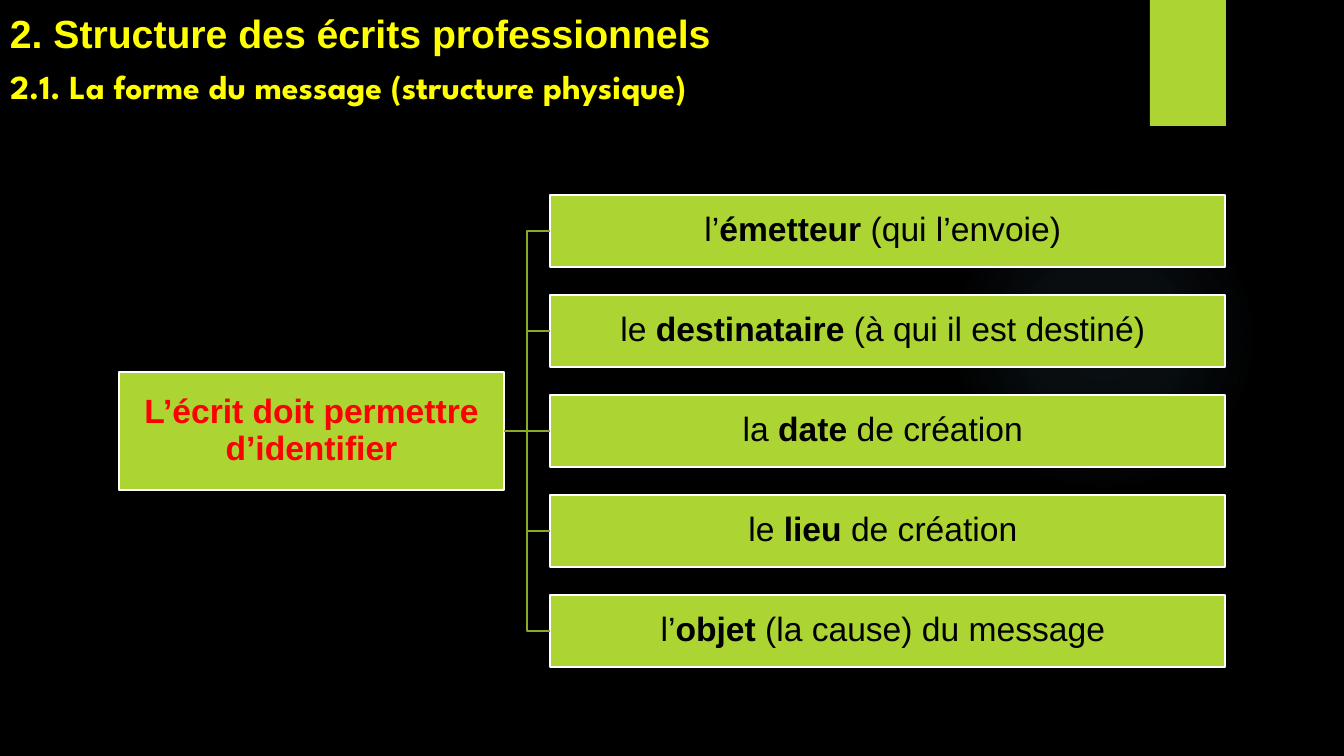
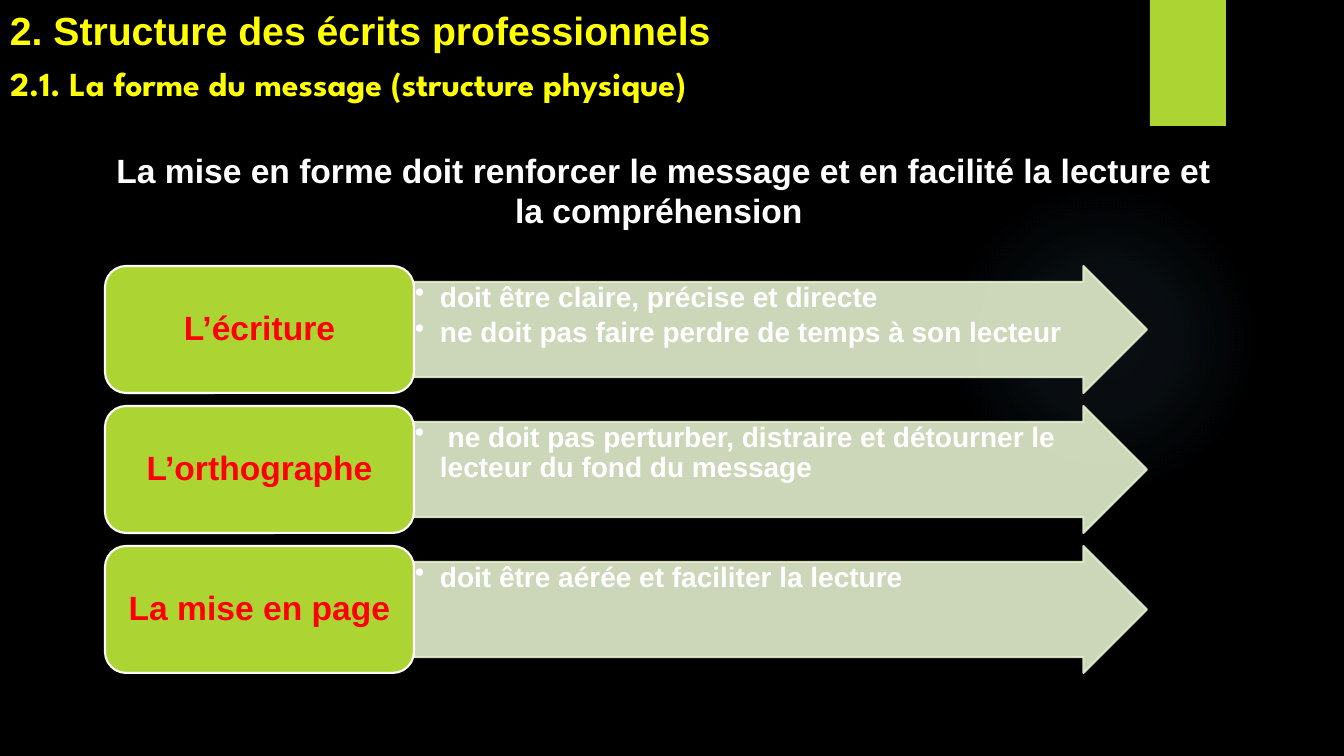
from dataclasses import dataclass

from lxml import etree
from pptx import Presentation
from pptx.dml.color import RGBColor
from pptx.enum.shapes import MSO_CONNECTOR, MSO_SHAPE
from pptx.enum.text import MSO_ANCHOR, PP_ALIGN
from pptx.oxml import parse_xml
from pptx.oxml.ns import nsdecls, qn
from pptx.util import Emu, Pt

# Enum members
RECTANGLE, ROUNDED = MSO_SHAPE.RECTANGLE, MSO_SHAPE.ROUNDED_RECTANGLE
ARROW, OVAL = MSO_SHAPE.RIGHT_ARROW, MSO_SHAPE.OVAL
ELBOW, STRAIGHT = MSO_CONNECTOR.ELBOW, MSO_CONNECTOR.STRAIGHT
LEFT, CENTER = PP_ALIGN.LEFT, PP_ALIGN.CENTER
TOP, MIDDLE, BOTTOM = MSO_ANCHOR.TOP, MSO_ANCHOR.MIDDLE, MSO_ANCHOR.BOTTOM
LEFT_SIDE, RIGHT_SIDE = 1, 3

COLORS = {
    "black": "000000", "white": "FFFFFF", "yellow": "FFFF00", "red": "FF0000",
    "lime": "ACD433", "pale": "E3EFCE", "olive": "8AAA29", "glow": "7AC4F0",
}
BODY_FONT, SUBTITLE_FONT = "Arial", "League Spartan"
EMU_PER_PX = 914400 / 100.8
SLIDE_WIDTH, SLIDE_HEIGHT = 1344, 756
LINE_WIDTH = Pt(1.5)

TITLE = "2. Structure des écrits professionnels"
SUBTITLE = "2.1. La forme du message (structure physique)"


@dataclass(frozen=True)
class Box:
    left: int
    top: int
    width: int
    height: int

    def emu(self) -> tuple:
        return tuple(px(n) for n in (self.left, self.top, self.width, self.height))

    def below(self, distance: int) -> "Box":
        return Box(self.left, self.top + distance, self.width, self.height)


@dataclass(frozen=True)
class Topic:
    name: str
    points: tuple


# Text between ** marks is bold
IDENTIFIERS = (
    "l’**émetteur** (qui l’envoie) ",
    "le **destinataire** (à qui il est destiné) ",
    "la **date** de création ",
    "le **lieu** de création ",
    "l’**objet** (la cause) du message ",
)
ROOT_BOX = Box(119, 372, 385, 118)
IDENTIFIER_BOX, IDENTIFIER_PITCH = Box(550, 195, 675, 72), 100

TOPICS = (
    Topic("L’écriture", ("doit être claire, précise et directe",
                         "ne doit pas faire perdre de temps à son lecteur")),
    Topic("L’orthographe", (" ne doit pas perturber, distraire et détourner le "
                            "lecteur du fond du message",)),
    Topic("La mise en page", ("doit être aérée et faciliter la lecture",)),
)
TOPIC_BOX, ARROW_BOX, TOPIC_PITCH = Box(105, 266, 309, 127), Box(414, 266, 733, 127), 140


def px(length: int) -> Emu:
    return Emu(round(length * EMU_PER_PX))


def rgb(name: str) -> RGBColor:
    return RGBColor.from_string(COLORS[name])


def add_panel(slide, kind, box: Box, fill: str, line: str = "", alpha: int = 100):
    """Add a preset shape with a flat fill and an optional outline."""
    shape = slide.shapes.add_shape(kind, *box.emu())
    shape.shadow.inherit = False
    shape.fill.solid()
    shape.fill.fore_color.rgb = rgb(fill)
    if line:
        shape.line.color.rgb = rgb(line)
        shape.line.width = LINE_WIDTH
    else:
        shape.line.fill.background()
    if alpha < 100:
        for color in shape.element.spPr.iter(qn("a:srgbClr")):
            etree.SubElement(color, qn("a:alpha"), val=str(alpha * 1000))
    return shape


def write_text(shape, *texts: str, size: int = 24, color: str = "black",
               font: str = BODY_FONT, bold: bool = False, align=CENTER,
               anchor=MIDDLE, inset: tuple = (10, 5), spacing: float = 0.9,
               after: float = 0, bullet: bool = False) -> None:
    """Write one paragraph per text into a shape."""
    frame = shape.text_frame
    frame.word_wrap = True
    frame.vertical_anchor = anchor
    frame.margin_left = frame.margin_right = px(inset[0])
    frame.margin_top = frame.margin_bottom = px(inset[1])
    for index, text in enumerate(texts):
        paragraph = frame.add_paragraph() if index else frame.paragraphs[0]
        if bullet:
            paragraph.level = 1
            properties = paragraph._p.get_or_add_pPr()
            properties.set("marL", str(px(25)))
            properties.set("indent", str(-px(25)))
            etree.SubElement(properties, qn("a:buChar"), char="•")
        paragraph.alignment = align
        paragraph.line_spacing = spacing
        paragraph.space_after = Pt(after)
        for position, part in enumerate(text.split("**")):
            run = paragraph.add_run()
            run.text = part
            run.font.name = font
            run.font.size = Pt(size)
            run.font.bold = bold or position % 2 == 1
            run.font.color.rgb = rgb(color)


def add_glow(slide) -> None:
    """Add the faint round light at the right."""
    shape = add_panel(slide, OVAL, Box(949, 184, 310, 310), "glow")
    stops = "".join(
        f'<a:gs pos="{place * 1000}"><a:srgbClr val="{COLORS["glow"]}">'
        f'<a:alpha val="{alpha * 1000}"/></a:srgbClr></a:gs>'
        for place, alpha in ((0, 7), (36, 6), (69, 0), (100, 0)))
    gradient = parse_xml(
        f'<a:gradFill {nsdecls("a")}><a:gsLst>{stops}</a:gsLst><a:path path="circle">'
        '<a:fillToRect l="50000" t="50000" r="50000" b="50000"/></a:path></a:gradFill>')
    properties = shape.element.spPr
    properties.replace(properties.find(qn("a:solidFill")), gradient)


def add_base_slide(presentation, title_height: int):
    """Add a slide with the shared background, band and titles."""
    slide = presentation.slides.add_slide(presentation.slide_layouts[6])
    slide.background.fill.solid()
    slide.background.fill.fore_color.rgb = rgb("black")
    add_glow(slide)
    add_panel(slide, RECTANGLE, Box(1150, 0, 76, 126), "lime")
    title = slide.shapes.add_textbox(*Box(0, 0, 1305, title_height).emu())
    write_text(title, TITLE, size=28, color="yellow", bold=True, align=LEFT,
               anchor=BOTTOM, spacing=1.0)
    subtitle = slide.shapes.add_textbox(*Box(0, title_height, 777, 50).emu())
    write_text(subtitle, SUBTITLE, color="yellow", font=SUBTITLE_FONT, bold=True,
               align=LEFT, anchor=TOP, spacing=1.0)
    return slide


def join(slide, kind, start, end) -> None:
    """Join the right side of one box to the left side of another."""
    connector = slide.shapes.add_connector(kind, 0, 0, 0, 0)
    connector.begin_connect(start, RIGHT_SIDE)
    connector.end_connect(end, LEFT_SIDE)
    connector.line.color.rgb = rgb("olive")
    connector.line.width = LINE_WIDTH
    etree.SubElement(connector.element.spPr, qn("a:effectLst"))


def build_identifiers(presentation) -> None:
    slide = add_base_slide(presentation, 61)
    root = add_panel(slide, RECTANGLE, ROOT_BOX, "lime", "white")
    write_text(root, "L’écrit doit permettre d’identifier", color="red", bold=True,
               inset=(2, 2))
    for index, text in enumerate(IDENTIFIERS):
        box = IDENTIFIER_BOX.below(index * IDENTIFIER_PITCH)
        item = add_panel(slide, RECTANGLE, box, "lime", "white")
        write_text(item, text, inset=(2, 2))
        join(slide, STRAIGHT if index == len(IDENTIFIERS) // 2 else ELBOW, root, item)


def build_topics(presentation) -> None:
    slide = add_base_slide(presentation, 58)
    heading = slide.shapes.add_textbox(*Box(90, 145, 1147, 92).emu())
    write_text(heading, "La mise en forme doit renforcer le message et en facilité la "
               "lecture et la compréhension ", color="white", bold=True, anchor=TOP,
               spacing=1.0)
    for index, topic in enumerate(TOPICS):
        offset = index * TOPIC_PITCH
        arrow = add_panel(slide, ARROW, ARROW_BOX.below(offset), "pale", "pale", alpha=90)
        arrow.adjustments[0], arrow.adjustments[1] = 0.75, 0.5
        write_text(arrow, *topic.points, size=20, color="white", bold=True, align=LEFT,
                   anchor=TOP, inset=(1, 1), after=3.5, bullet=True)
        label = add_panel(slide, ROUNDED, TOPIC_BOX.below(offset), "lime", "white")
        write_text(label, topic.name, color="red", bold=True)


def main() -> None:
    presentation = Presentation()
    presentation.slide_width = px(SLIDE_WIDTH)
    presentation.slide_height = px(SLIDE_HEIGHT)
    build_identifiers(presentation)
    build_topics(presentation)
    presentation.save("out.pptx")


if __name__ == "__main__":
    main()
